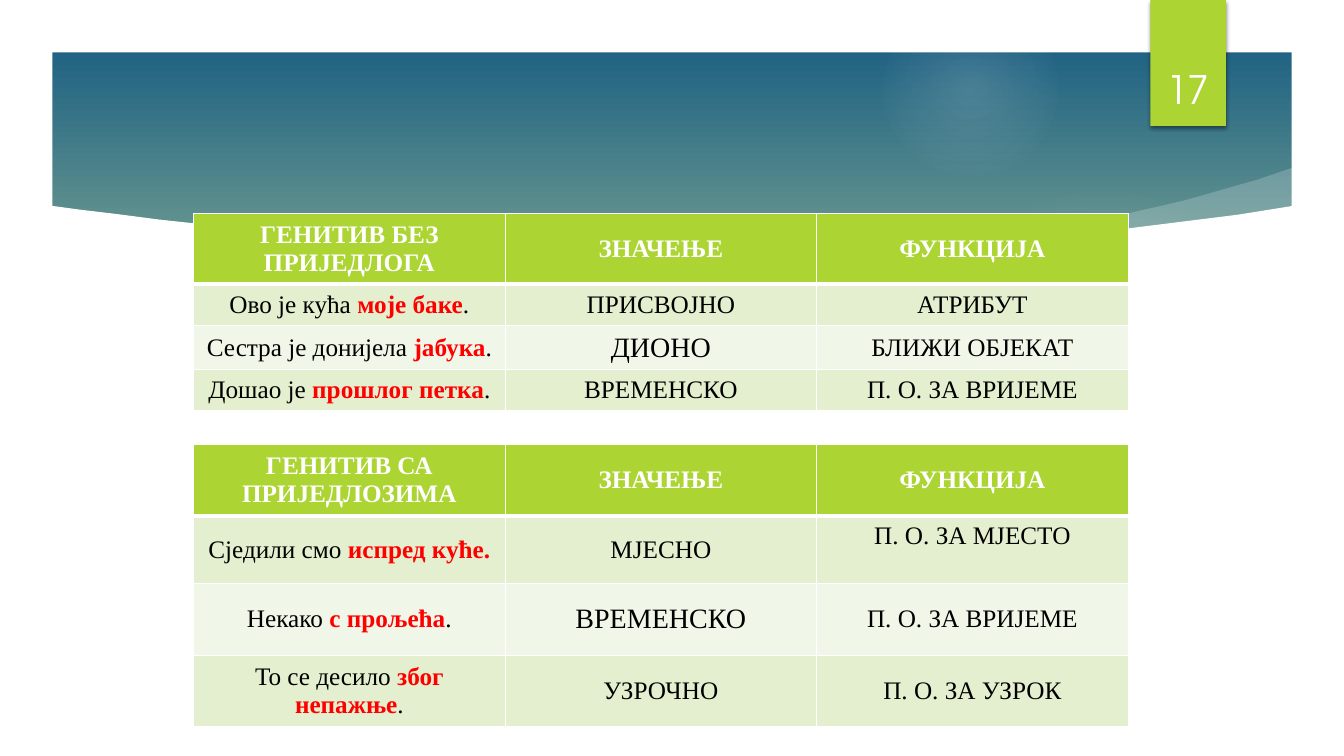
from lxml.etree import SubElement
from pptx import Presentation
from pptx.dml.color import RGBColor
from pptx.enum.shapes import MSO_SHAPE
from pptx.enum.text import MSO_ANCHOR, PP_ALIGN
from pptx.oxml import parse_xml
from pptx.oxml.ns import nsdecls, qn
from pptx.util import Inches, Pt

WHITE = RGBColor(0xFF, 0xFF, 0xFF)
BLACK = RGBColor(0, 0, 0)
RED = RGBColor(0xFF, 0, 0)
LIME = RGBColor(0xAC, 0xD4, 0x33)
BANDS = [RGBColor(0xE3, 0xEF, 0xCE), RGBColor(0xF1, 0xF7, 0xE8)]

# Content: the example sentence is (before, highlighted, after)
PAGE_NUMBER = "17"
TABLES = [
    {"top": 2.12, "heights": [0.65, 0.41, 0.41, 0.41],
     "header": ["ГЕНИТИВ БЕЗ ПРИЈЕДЛОГА", "ЗНАЧЕЊЕ", "ФУНКЦИЈА"],
     "rows": [
         (("Ово је кућа ", "моје баке", "."), "ПРИСВОЈНО", "АТРИБУТ"),
         (("Сестра је донијела", " јабука", "."), "ДИОНО", "БЛИЖИ ОБЈЕКАТ"),
         (("Дошао је ", "прошлог петка", "."), "ВРЕМЕНСКО", "П. О. ЗА ВРИЈЕМЕ"),
     ]},
    {"top": 4.41, "heights": [0.71, 0.65, 0.71, 0.71],
     "header": ["ГЕНИТИВ СА ПРИЈЕДЛОЗИМА", "ЗНАЧЕЊЕ", "ФУНКЦИЈА"],
     "rows": [
         (("Сједили смо ", "испред куће.", ""), "МЈЕСНО", "П. О. ЗА МЈЕСТО"),
         (("Некако ", "с прољећа", "."), "ВРЕМЕНСКО", "П. О. ЗА ВРИЈЕМЕ"),
         (("То се десило ", "због непажње", "."), "УЗРОЧНО", "П. О. ЗА УЗРОК"),
     ]},
]
TABLE_LEFT, COLUMN_WIDTH = 1.92, 3.09
LARGE_CELL = (2, 1)  # row and column set in larger type
RAISED_TEXT = "П. О. ЗА МЈЕСТО"

# Decoration: gradient stops are (percent, colour, opacity percent)
SKY = [(0, "0E5580", 100), (74, "DAECA3", 100), (83, "DAECA3", 100), (100, "E6F2C2", 100)]
GLOWS = [
    (9.41, 1.83, 3.08, [(0, "F7F7F7", 7), (36, "F7F7F7", 6), (69, "F7F7F7", 0)]),
    (8.75, 0, 1.75, [(0, "F7F7F7", 14), (36, "F7F7F7", 7), (73, "F7F7F7", 0)]),
]
WING = [(9.34, 2.5), (10.2, 2.48), (11.1, 2.39), (12, 2.28), (12.89, 2.14), (12.83, 1.66),
        (12.48, 1.78), (12.13, 1.88), (11.78, 1.98), (11.44, 2.06), (11.09, 2.14),
        (10.75, 2.21), (10.42, 2.27), (10.1, 2.32), (9.69, 2.38), (9.3, 2.43)]
PANEL = [(0.5, 2.04), (0.5, 7), (12.84, 7), (12.84, 2.04), (12.28, 2.13), (11.72, 2.2),
         (11.16, 2.27), (10.6, 2.32), (10.04, 2.37), (9.49, 2.41), (8.94, 2.44),
         (8.4, 2.46), (7.86, 2.47), (7.34, 2.48), (6.82, 2.48), (6.32, 2.47),
         (5.83, 2.46), (5.35, 2.45), (4.88, 2.43), (4.44, 2.41), (4.01, 2.38),
         (3.6, 2.36), (3.21, 2.33), (2.83, 2.3), (2.49, 2.27), (2.16, 2.24),
         (1.87, 2.21), (1.59, 2.18), (1.13, 2.12), (0.79, 2.08)]


def set_gradient(properties, stops, direction):
    """Replace the solid fill of a properties element by a gradient."""
    stop_xml = "".join(
        f'<a:gs pos="{position * 1000}"><a:srgbClr val="{colour}">'
        f'<a:alpha val="{opacity * 1000}"/></a:srgbClr></a:gs>'
        for position, colour, opacity in stops)
    gradient = parse_xml(f'<a:gradFill {nsdecls("a")} rotWithShape="1">'
                         f'<a:gsLst>{stop_xml}</a:gsLst>{direction}</a:gradFill>')
    properties.replace(properties.find(qn("a:solidFill")), gradient)


def paint(shape, colour):
    shape.shadow.inherit = False
    shape.fill.solid()
    shape.fill.fore_color.rgb = colour
    shape.line.fill.background()
    return shape


def add_outline(points):
    builder = slide.shapes.build_freeform(
        Inches(points[0][0]), Inches(points[0][1]), scale=1.0)
    builder.add_line_segments([(Inches(x), Inches(y)) for x, y in points[1:]], close=True)
    return paint(builder.convert_to_shape(), WHITE)


def add_run(paragraph, text, font_name, size, colour, bold=False):
    run = paragraph.add_run()
    run.text = text
    run.font.name = font_name
    run.font.size = Pt(size)
    run.font.color.rgb = colour
    run.font.bold = bold


def set_borders(cell, row):
    properties = cell._tc.get_or_add_tcPr()
    widths = {"lnL": 1, "lnR": 1, "lnT": 3 if row == 1 else 1, "lnB": 3 if row == 0 else 1}
    for tag, width in widths.items():
        line = SubElement(properties, qn(f"a:{tag}"), w=str(Pt(width)))
        fill = SubElement(line, qn("a:solidFill"))
        SubElement(fill, qn("a:srgbClr"), val=str(WHITE))


def fill_cell(cell, content, row, column):
    set_borders(cell, row)
    cell.fill.solid()
    cell.fill.fore_color.rgb = LIME if row == 0 else BANDS[(row - 1) % 2]
    cell.vertical_anchor = MSO_ANCHOR.MIDDLE
    if content == RAISED_TEXT:
        cell.margin_bottom = Inches(0.32)
    paragraph = cell.text_frame.paragraphs[0]
    paragraph.alignment = PP_ALIGN.CENTER
    size = 20 if (row, column) == LARGE_CELL else 18
    parts = content if isinstance(content, tuple) else (content,)
    for index, text in enumerate(parts):
        highlighted = index == 1
        colour = WHITE if row == 0 else RED if highlighted else BLACK
        if text:
            add_run(paragraph, text, "Times New Roman", size, colour, row == 0 or highlighted)


def add_grammar_table(top, heights, header, rows):
    columns = len(header)
    table = slide.shapes.add_table(
        len(heights), columns, Inches(TABLE_LEFT), Inches(top),
        Inches(COLUMN_WIDTH * columns), Inches(sum(heights))).table
    for column in table.columns:
        column.width = Inches(COLUMN_WIDTH)
    for row, contents in enumerate([header, *rows]):
        table.rows[row].height = Inches(heights[row])
        for column, content in enumerate(contents):
            fill_cell(table.cell(row, column), content, row, column)


presentation = Presentation()
presentation.slide_width = Inches(13.33)
presentation.slide_height = Inches(7.5)
slide = presentation.slides.add_slide(presentation.slide_layouts[6])

# Background gradient and soft glows
slide.background.fill.solid()
set_gradient(slide._element.find(".//" + qn("p:bgPr")), SKY,
             '<a:lin ang="5400000" scaled="0"/>')
for left, top, diameter, stops in GLOWS:
    glow = paint(slide.shapes.add_shape(
        MSO_SHAPE.OVAL, Inches(left), Inches(top), Inches(diameter), Inches(diameter)), WHITE)
    set_gradient(glow._element.spPr, stops,
                 '<a:path path="circle"><a:fillToRect l="50000" t="50000" '
                 'r="50000" b="50000"/></a:path>')

# Curved white panel, translucent wing and white frame
wing = add_outline(WING)
wing_colour = wing._element.spPr.find(qn("a:solidFill"))[0]
SubElement(wing_colour, qn("a:alpha"), val="20000")
add_outline(PANEL)
frame = paint(slide.shapes.add_shape(
    MSO_SHAPE.FRAME, 0, 0, presentation.slide_width, presentation.slide_height), WHITE)
frame.adjustments[0] = 0.52 / 7.5

# Page number tab
tab = paint(slide.shapes.add_shape(
    MSO_SHAPE.RECTANGLE, Inches(11.41), 0, Inches(0.75), Inches(1.25)), LIME)
effects = tab._element.spPr.find(qn("a:effectLst"))
shadow = SubElement(effects, qn("a:outerShdw"), blurRad=str(Pt(3)), dist=str(Pt(2)),
                    dir="5400000", rotWithShape="0")
shadow_colour = SubElement(shadow, qn("a:srgbClr"), val=str(BLACK))
SubElement(shadow_colour, qn("a:alpha"), val="45000")
number_frame = slide.shapes.add_textbox(
    Inches(11.32), Inches(0.32), Inches(0.92), Inches(0.84)).text_frame
number_frame.word_wrap = True
number_frame.vertical_anchor = MSO_ANCHOR.BOTTOM
number_frame.paragraphs[0].alignment = PP_ALIGN.CENTER
add_run(number_frame.paragraphs[0], PAGE_NUMBER, "TeX Gyre Adventor", 28, WHITE)

# Grammar tables
for grammar_table in TABLES:
    add_grammar_table(**grammar_table)

presentation.save("out.pptx")
